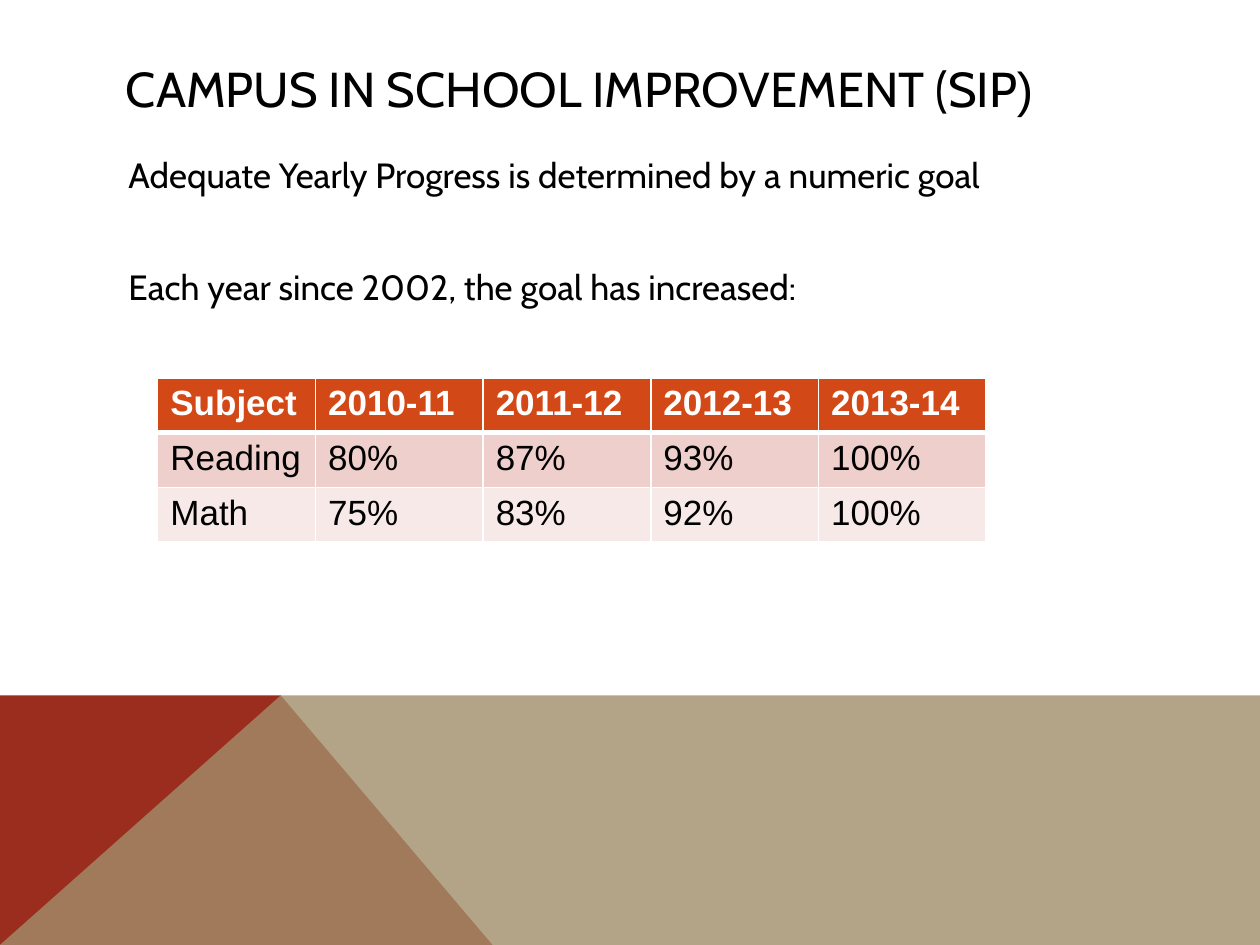
from lxml import etree
from pptx import Presentation
from pptx.dml.color import RGBColor
from pptx.enum import text
from pptx.oxml import ns
from pptx.util import Cm, Pt

BLACK = RGBColor(0, 0, 0)
WHITE = RGBColor(0xFF, 0xFF, 0xFF)
RED = RGBColor(0x9B, 0x2D, 0x1F)
TAN = RGBColor(0xA2, 0x8E, 0x6A)
ORANGE = RGBColor(0xD3, 0x48, 0x17)
ROSE = RGBColor(0xEF, 0xCF, 0xCC)
PALE = RGBColor(0xF7, 0xE9, 0xE8)

WIDE, HIGH = 25.4, 19.05
TOP, PEAK = 14.02, 5.66  # upper edge of the band, and where its parts meet

GOALS = [
    ("Subject", "2010-11", "2011-12", "2012-13", "2013-14"),
    ("Reading", "80%", "87%", "93%", "100%"),
    ("Math", "75%", "83%", "92%", "100%"),
]


def add_run(para, words, size, font="Cabin", color=BLACK, bold=False):
    run = para.add_run()
    run.text = words
    run.font.size = Pt(size)
    run.font.name = font
    run.font.bold = bold
    run.font.color.rgb = color


def add_box(slide, left, top, width, height, anchor):
    box = slide.shapes.add_textbox(Cm(left), Cm(top), Cm(width), Cm(height))
    frame = box.text_frame
    frame.word_wrap = True
    frame.vertical_anchor = anchor
    return frame


def add_area(slide, points, color, alpha=100):
    """Draw a filled outline; alpha is its opacity in percent."""
    first, *rest = [(Cm(x), Cm(y)) for x, y in points]
    path = slide.shapes.build_freeform(*first)
    path.add_line_segments(rest, close=True)
    area = path.convert_to_shape()
    area.shadow.inherit = False
    area.fill.solid()
    area.fill.fore_color.rgb = color
    area.line.fill.background()
    if alpha < 100:
        tint = area._element.spPr.find(".//" + ns.qn("a:srgbClr"))
        etree.SubElement(tint, ns.qn("a:alpha"), val=str(alpha * 1000))


def add_edges(cell, **widths):
    """Give the cell white borders, ahead of its fill as the schema asks."""
    props = cell._tc.get_or_add_tcPr()
    for at, (side, width) in enumerate(widths.items()):
        edge = etree.Element(ns.qn("a:" + side), w=str(Pt(width)))
        fill = etree.SubElement(edge, ns.qn("a:solidFill"))
        etree.SubElement(fill, ns.qn("a:srgbClr"), val=str(WHITE))
        props.insert(at, edge)


def add_goals(slide):
    rows, cols = len(GOALS), len(GOALS[0])
    widths = [3.18] + [3.38] * (cols - 1)
    frame = slide.shapes.add_table(rows, cols, Cm(3.18), Cm(7.62),
                                   Cm(sum(widths)), Cm(1.04 * rows))
    table = frame.table
    for col, width in zip(table.columns, widths):
        col.width = Cm(width)
    for r, (values, color) in enumerate(zip(GOALS, (ORANGE, ROSE, PALE))):
        table.rows[r].height = Cm(1.04)
        head = r == 0
        for c, value in enumerate(values):
            cell = table.cell(r, c)
            cell.fill.solid()
            cell.fill.fore_color.rgb = color
            add_edges(cell, lnL=1, lnR=1, lnT=3 if r == 1 else 1,
                      lnB=3 if head else 1)
            add_run(cell.text_frame.paragraphs[0], value, 20, "Arial",
                    WHITE if head else BLACK, head)


def main():
    deck = Presentation()
    deck.slide_width, deck.slide_height = Cm(WIDE), Cm(HIGH)
    slide = deck.slides.add_slide(deck.slide_layouts[6])

    add_area(slide, [(0, HIGH), (0, TOP), (PEAK, TOP), (9.93, HIGH)], RED)
    add_area(slide, [(0, HIGH), (PEAK, TOP), (WIDE, TOP), (WIDE, HIGH)],
             TAN, 80)

    body = add_box(slide, 2.34, 2.97, 20.88, 11.43, text.MSO_ANCHOR.TOP)
    add_run(body.paragraphs[0],
            "Adequate Yearly Progress is determined by a numeric goal", 20)
    para = body.add_paragraph()
    para.space_before = Pt(40)
    add_run(para, "Each year since 2002, the goal has increased:", 20)

    title = add_box(slide, 2.29, 1.02, 20.88, 1.52, text.MSO_ANCHOR.MIDDLE)
    add_run(title.paragraphs[0], "CAMPUS IN SCHOOL IMPROVEMENT (SIP", 28)
    add_run(title.paragraphs[0], ")", 28, "Arial")

    add_goals(slide)
    deck.save("out.pptx")


if __name__ == "__main__":
    main()
